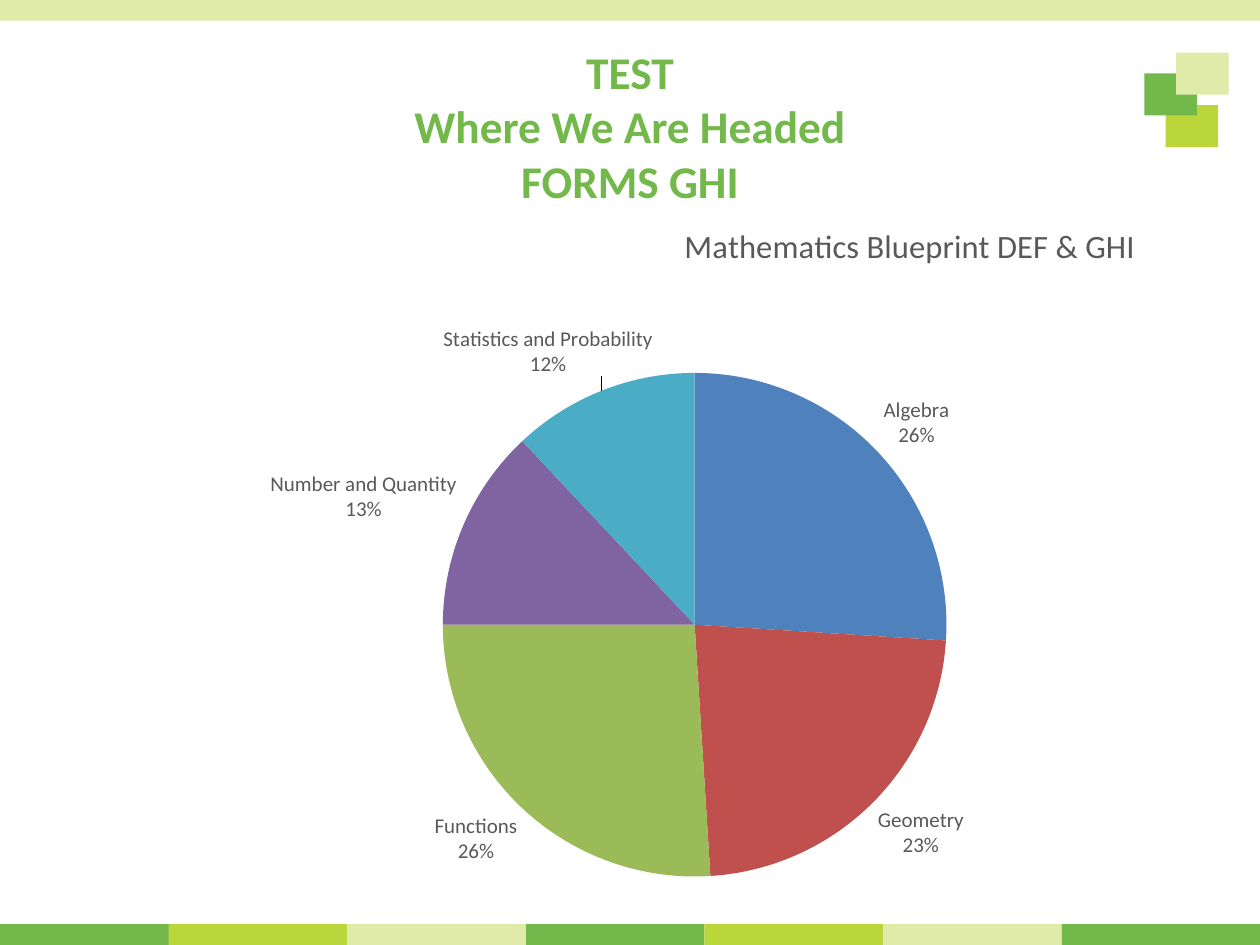
import copy
import pptx
import pptx.chart.data
import pptx.dml.color
import pptx.enum.chart
import pptx.enum.shapes
import pptx.enum.text
import pptx.oxml
import pptx.oxml.ns
import pptx.util
from dataclasses import dataclass
from typing import Any

Cm = pptx.util.Cm
Pt = pptx.util.Pt
RGBColor = pptx.dml.color.RGBColor

GREEN = RGBColor(0x73, 0xB8, 0x4B)
LIME = RGBColor(0xBB, 0xD6, 0x3B)
PALE = RGBColor(0xE0, 0xEB, 0xA9)
GREY = RGBColor(0x59, 0x59, 0x59)
BLACK = RGBColor(0x00, 0x00, 0x00)
SLICE_COLORS = [
    RGBColor(0x4F, 0x81, 0xBD),
    RGBColor(0xC0, 0x50, 0x4D),
    RGBColor(0x9B, 0xBB, 0x59),
    RGBColor(0x80, 0x64, 0xA2),
    RGBColor(0x4B, 0xAC, 0xC6),
]
BLUEPRINT = {
    "Algebra": 26,
    "Geometry": 23,
    "Functions": 26,
    "Number and Quantity": 13,
    "Statistics and Probability": 12,
}
CHART_NS = pptx.oxml.ns.nsdecls("c")
C15_NS = 'xmlns:c15="http://schemas.microsoft.com/office/drawing/2012/chart"'


def apply(target, formats):
    for name, value in formats.items():
        setattr(target, name, value)


def layout_xml(**places):
    """Manual chart layout, in fractions of the chart area."""
    target = '<c:layoutTarget val="inner"/>' if "w" in places else ""
    modes = "".join(f'<c:{key}Mode val="edge"/>' for key in "xy")
    values = "".join(f'<c:{key} val="{value}"/>' for key, value in places.items())
    return pptx.oxml.parse_xml(
        f"<c:layout {CHART_NS}><c:manualLayout>"
        f"{target}{modes}{values}</c:manualLayout></c:layout>"
    )


def narrow_label(labels, index, x, y, w, h):
    """Give one label its own size and offset; the rest follows the series."""
    label = pptx.oxml.parse_xml(
        f'<c:dLbl {CHART_NS}><c:idx val="{index}"/><c:layout><c:manualLayout>'
        f'<c:x val="{x}"/><c:y val="{y}"/></c:manualLayout></c:layout></c:dLbl>')
    for part in labels:
        if not part.tag.endswith("eaderLines"):
            label.append(copy.deepcopy(part))
    label.append(pptx.oxml.parse_xml(
        f'<c:extLst {CHART_NS}><c:ext {C15_NS} '
        'uri="{CE6537A1-D6FC-4f65-9D91-7224C49458BB}"><c15:layout>'
        f'<c:manualLayout><c:w val="{w}"/><c:h val="{h}"/></c:manualLayout>'
        "</c15:layout></c:ext></c:extLst>"))
    labels.insert(0, label)


@dataclass
class Deck:
    slide: Any
    font: str = "Calibri"

    def style(self, font, size, color, bold=False):
        apply(font, {"name": self.font, "size": Pt(size), "bold": bold})
        font.color.rgb = color

    def block(self, left, top, width, height, color):
        block = self.slide.shapes.add_shape(
            pptx.enum.shapes.MSO_SHAPE.RECTANGLE,
            Cm(left), Cm(top), Cm(width), Cm(height))
        block.shadow.inherit = False
        block.fill.solid()
        block.fill.fore_color.rgb = color
        block.line.fill.background()

    def heading(self, paragraphs, left, top, width, height):
        heading = self.slide.shapes.title
        apply(heading, {"left": Cm(left), "top": Cm(top),
                        "width": Cm(width), "height": Cm(height)})
        frame = heading.text_frame
        apply(frame, {"word_wrap": True,
                      "auto_size": pptx.enum.text.MSO_AUTO_SIZE.NONE,
                      "vertical_anchor": pptx.enum.text.MSO_ANCHOR.TOP})
        for index, lines in enumerate(paragraphs):
            paragraph = frame.add_paragraph() if index else frame.paragraphs[0]
            apply(paragraph, {"alignment": pptx.enum.text.PP_ALIGN.CENTER,
                              "space_before": Pt(0)})
            for number, line in enumerate(lines):
                if number:
                    paragraph.add_line_break()
                run = paragraph.add_run()
                run.text = line
                self.style(run.font, 25.9, GREEN, bold=True)

    def pie(self, title, shares, left, top, width, height):
        data = pptx.chart.data.CategoryChartData()
        data.categories = list(shares)
        data.add_series("Series 1", list(shares.values()))
        chart = self.slide.shapes.add_chart(
            pptx.enum.chart.XL_CHART_TYPE.PIE,
            Cm(left), Cm(top), Cm(width), Cm(height), data).chart
        chart.has_legend = False
        self.style(chart.font, 10, BLACK)

        # Chart title, right of centre
        chart.has_title = True
        title_frame = chart.chart_title.text_frame
        title_frame.text = title
        self.style(title_frame.paragraphs[0].runs[0].font, 18.6, GREY)

        # Slices and their labels
        plot = chart.plots[0]
        plot.vary_by_categories = True
        for index, color in enumerate(SLICE_COLORS):
            fill = plot.series[0].points[index].format.fill
            fill.solid()
            fill.fore_color.rgb = color
        labels = plot.series[0].data_labels
        apply(labels, {
            "show_category_name": True,
            "show_percentage": True,
            "show_value": False,
            "position": pptx.enum.chart.XL_LABEL_POSITION.OUTSIDE_END,
        })
        self.style(labels.font, 12, GREY)

        # Line break between name and percentage; the last label wraps
        root = chart.element
        label_root = root.xpath(".//c:ser/c:dLbls")[0]
        label_root.xpath("c:showBubbleSize")[0].addnext(pptx.oxml.parse_xml(
            f"<c:separator {CHART_NS}>\n</c:separator>"))
        narrow_label(label_root, len(shares) - 1, x=0.05, y=-0.01, w=0.13, h=0.11)

        # Places of title and pie
        for old in root.xpath("c:chart/c:title/c:layout | .//c:plotArea/c:layout"):
            old.getparent().remove(old)
        root.xpath("c:chart/c:title/c:tx")[0].addnext(layout_xml(x=0.55, y=0.01))
        root.xpath(".//c:plotArea")[0].insert(
            0, layout_xml(x=0.33, y=0.23, w=0.47, h=0.72))


presentation = pptx.Presentation()
apply(presentation, {"slide_width": Cm(25.4), "slide_height": Cm(19.05)})
deck = Deck(presentation.slides.add_slide(presentation.slide_layouts[5]))

# Top band and corner squares
deck.block(0, 0, 25.4, 0.42, PALE)
for left, top, color in [(23.5, 2.12, LIME), (23.07, 1.48, GREEN), (23.71, 1.06, PALE)]:
    deck.block(left, top, 1.06, 0.85, color)

# Bottom band: the first block starts at the edge, the last one runs to it
STEP, BLOCKS = 3.6, 7
for index in range(BLOCKS):
    left = max(0, index * STEP - 0.2)
    width = 25.4 - left if index == BLOCKS - 1 else STEP
    deck.block(left, 18.63, width, 0.42, (GREEN, LIME, PALE)[index % 3])

# Content
deck.pie("Mathematics Blueprint DEF & GHI", BLUEPRINT, 1.8, 4.23, 21.6, 14.18)
deck.heading([["TEST"], ["Where We Are Headed", "FORMS GHI"]], 1.27, 0.76, 22.86, 3.18)

presentation.save("out.pptx")
